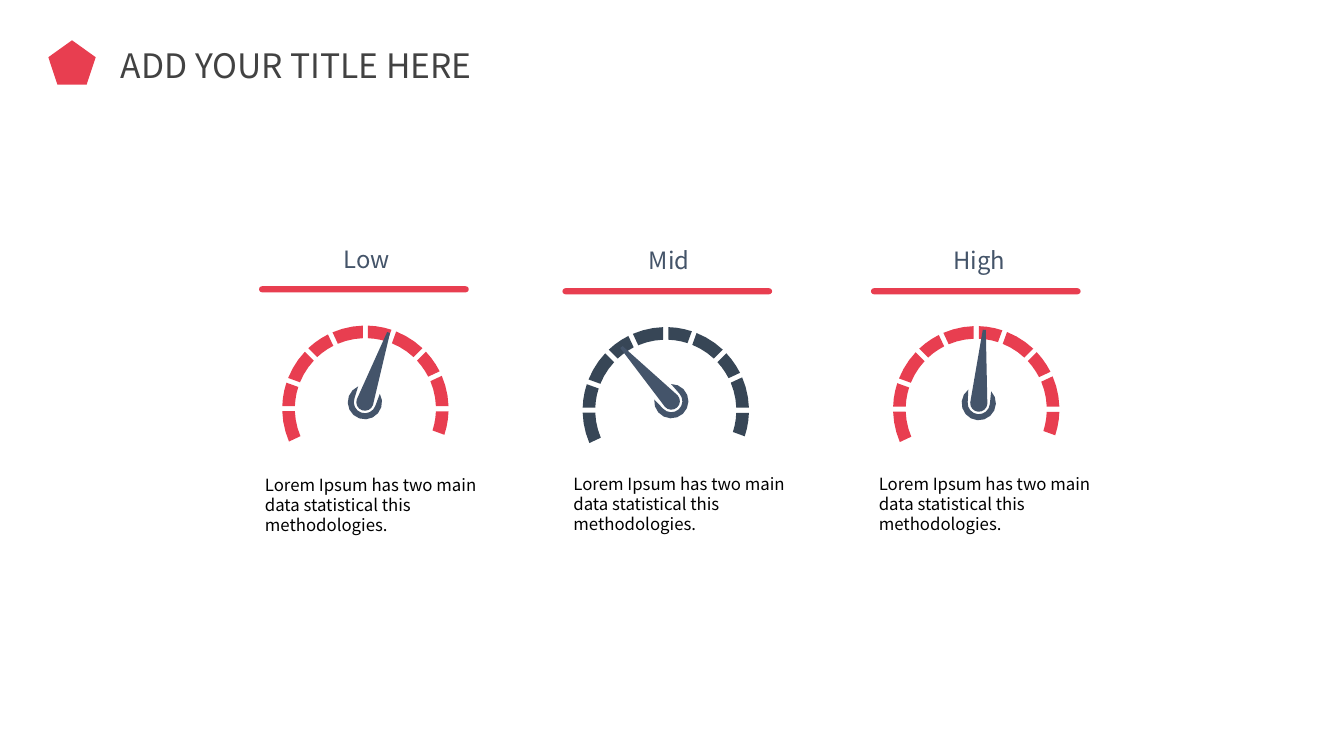
import dataclasses
import itertools
import math

import pptx
import pptx.dml.color
import pptx.enum.shapes
import pptx.enum.text
import pptx.util


@dataclasses.dataclass(frozen=True)
class Theme:
    font: str = "Noto Sans CJK JP"
    red: str = "E83E50"
    navy: str = "374656"
    needle: str = "44546A"
    label: str = "445469"
    title: str = "424242"
    body: str = "000000"
    title_size: int = 24
    label_size: int = 17
    body_size: int = 12


@dataclasses.dataclass(frozen=True)
class Gauge:
    name: str
    color: str
    label_box: tuple
    rule_box: tuple
    body_box: tuple
    dial_center: tuple
    hub_center: tuple
    needle_angle: float


THEME = Theme()
GRID = pptx.util.Inches(0.1)
SLIDE_COLUMNS, SLIDE_ROWS = 133.33, 75

BODY = "Lorem Ipsum has two main data statistical this methodologies."
GAUGES = (
    Gauge("Low", THEME.red, (33.1, 23.8, 9.7, 3.9), (25.7, 28.4, 20.8, 0.6),
          (25.3, 46.6, 26, 7.1), (36.25, 40.55), (36.2, 39.9), 18.8),
    Gauge("Mid", THEME.navy, (63.4, 23.9, 9.7, 3.9), (55.8, 28.6, 20.8, 0.6),
          (55.9, 46.5, 26.7, 7.1), (66.05, 40.7), (66.6, 39.8), -42.7),
    Gauge("High", THEME.red, (93.6, 23.9, 8.9, 3.9), (86.4, 28.6, 20.8, 0.6),
          (86.2, 46.5, 26.1, 7.1), (96.85, 40.6), (97.1, 40), 4.3),
)

DIAL_START = -115
DIAL_STEPS = (25, 20) * 5
DIAL_OUTER, DIAL_INNER = 8.25, 7
DIAL_GAP = 0.5
HUB_OUTER, HUB_INNER = 1.7, 1.1
HUB_OPENING = 42
NEEDLE_LENGTH, NEEDLE_TIP, NEEDLE_BASE = 7.3, 0.15, 0.85


def grid(value):
    return round(value * GRID)


def rgb(color):
    return pptx.dml.color.RGBColor.from_string(color)


def paint(shape, color):
    shape.shadow.inherit = False
    shape.fill.solid()
    shape.fill.fore_color.rgb = rgb(color)
    shape.line.fill.background()


def place(shape, box):
    shape.left, shape.top, shape.width, shape.height = map(grid, box)


def write(shape, text, size, color):
    frame = shape.text_frame
    frame.text = text
    frame.word_wrap = True
    frame.vertical_anchor = pptx.enum.text.MSO_ANCHOR.TOP
    para = frame.paragraphs[0]
    para.alignment = pptx.enum.text.PP_ALIGN.LEFT
    font = para.runs[0].font
    font.name = THEME.font
    font.size = pptx.util.Pt(size)
    font.color.rgb = rgb(color)


def add_text(page, box, text, size, color):
    write(page.shapes.add_textbox(*map(grid, box)), text, size, color)


def add_preset(page, kind, box, color):
    shape = page.shapes.add_shape(kind, *map(grid, box))
    paint(shape, color)
    return shape


def arc(radius, start, end, steps):
    angles = [math.radians(start + (end - start) * step / steps)
              for step in range(steps + 1)]
    return [(radius * math.sin(angle), -radius * math.cos(angle))
            for angle in angles]


def add_outline(group, points, center, color, turn=0):
    sine, cosine = math.sin(math.radians(turn)), math.cos(math.radians(turn))
    placed = [(grid(center[0] + x * cosine - y * sine),
               grid(center[1] + x * sine + y * cosine)) for x, y in points]
    builder = group.shapes.build_freeform(*placed[0], scale=1.0)
    builder.add_line_segments(placed[1:], close=True)
    paint(builder.convert_to_shape(), color)


def add_dial(page, gauge):
    group = page.shapes.add_group_shape()
    breaks = itertools.accumulate(DIAL_STEPS, initial=DIAL_START)
    outer_gap, inner_gap = (math.degrees(math.asin(DIAL_GAP / 2 / radius))
                            for radius in (DIAL_OUTER, DIAL_INNER))
    for start, end in itertools.pairwise(breaks):
        segment = (arc(DIAL_OUTER, start + outer_gap, end - outer_gap, 3)
                   + arc(DIAL_INNER, end - inner_gap, start + inner_gap, 3))
        add_outline(group, segment, gauge.dial_center, gauge.color)


def add_needle(page, gauge):
    group = page.shapes.add_group_shape()
    hub = (arc(HUB_OUTER, HUB_OPENING, 360 - HUB_OPENING, 12)
           + arc(HUB_INNER, 270, 90, 8))
    pointer = ([(-NEEDLE_TIP, -NEEDLE_LENGTH), (NEEDLE_TIP, -NEEDLE_LENGTH)]
               + arc(NEEDLE_BASE, 90, 270, 8))
    for points in (hub, pointer):
        add_outline(group, points, gauge.hub_center, THEME.needle,
                    gauge.needle_angle)


def add_gauge(page, gauge):
    add_text(page, gauge.body_box, BODY, THEME.body_size, THEME.body)
    add_text(page, gauge.label_box, gauge.name, THEME.label_size, THEME.label)
    rule = add_preset(page, pptx.enum.shapes.MSO_SHAPE.ROUNDED_RECTANGLE,
                      gauge.rule_box, THEME.red)
    rule.adjustments[0] = 0.5
    add_dial(page, gauge)
    add_needle(page, gauge)


def main():
    deck = pptx.Presentation()
    deck.slide_width = grid(SLIDE_COLUMNS)
    deck.slide_height = grid(SLIDE_ROWS)
    page = deck.slides.add_slide(deck.slide_layouts.get_by_name("Title Only"))
    title = page.shapes.title
    place(title, (11, 4, 49.5, 5))
    write(title, "ADD YOUR TITLE HERE", THEME.title_size, THEME.title)
    add_preset(page, pptx.enum.shapes.MSO_SHAPE.REGULAR_PENTAGON,
               (4.8, 4, 4.7, 4.4), THEME.red)
    for gauge in GAUGES:
        add_gauge(page, gauge)
    deck.save("out.pptx")


if __name__ == "__main__":
    main()
